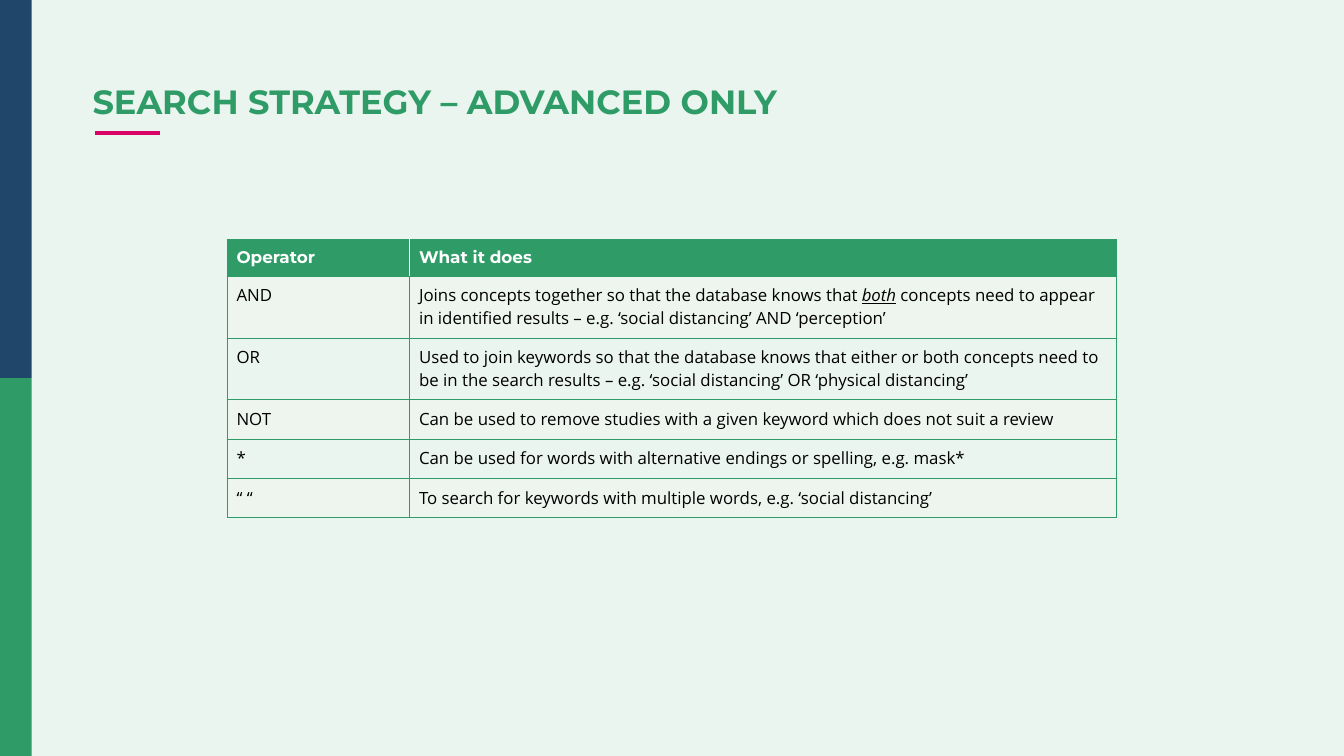
from dataclasses import dataclass

from lxml import etree
from pptx import Presentation
from pptx.dml.color import RGBColor
from pptx.enum import shapes, text
from pptx.oxml import ns
from pptx.util import Cm, Pt


@dataclass(frozen=True)
class Theme:
    green: str = "2F9C67"
    navy: str = "204669"
    pink: str = "D90368"
    pale: str = "EAF5F0"
    band: str = "EEF5EF"
    white: str = "FFFFFF"
    black: str = "000000"
    head: str = "Montserrat"
    body: str = "Open Sans"
    title: float = 18
    cell: float = 9
    rule: float = 2.25
    edge: float = 0.5


@dataclass(frozen=True)
class Bar:
    top: float
    color: str


@dataclass(frozen=True)
class Row:
    name: str
    use: tuple[str, ...]  # every second part is stressed
    high: float
    fill: str | None = None


T = Theme()
WIDE, HIGH = 25.4, 14.29
HALF = HIGH / 2
BARS = (Bar(0, T.navy), Bar(HALF, T.green))
COLS = (3.45, 13.36)
ONE, TWO = 0.74, 1.17  # row heights by number of text lines
ROWS = (
    Row("Operator", ("What it does",), 0.7, T.green),
    Row("AND", ("Joins concepts together so that the database knows that ", "both",
                " concepts need to appear in identified results – e.g. "
                "‘social distancing’ AND ‘perception’"), TWO, T.band),
    Row("OR", ("Used to join keywords so that the database knows that either or "
               "both concepts need to be in the search results – e.g. "
               "‘social distancing’ OR ‘physical distancing’",), TWO),
    Row("NOT", ("Can be used to remove studies with a given keyword which does "
                "not suit a review",), ONE, T.band),
    Row("*", ("Can be used for words with alternative endings or spelling, "
              "e.g. mask*",), ONE),
    Row("“ “", ("To search for keywords with multiple words, "
                "e.g. ‘social distancing’",), ONE, T.band),
)


def rgb(color: str) -> RGBColor:
    return RGBColor.from_string(color)


def write(frame, parts: tuple[str, ...], *, size: float, font: str, color: str,
          bold: bool = False, space: float | None = None) -> None:
    """Fill the first paragraph; every second part is italic and underlined."""
    para = frame.paragraphs[0]
    para.line_spacing = space
    for i, part in enumerate(parts):
        run = para.add_run()
        run.text = part
        face = run.font
        face.size, face.name, face.bold = Pt(size), font, bold
        face.color.rgb = rgb(color)
        face.italic = face.underline = i % 2 == 1


def edge(cell, sides: dict[str, str]) -> None:
    """Draw cell borders; sides maps L, R, T, B, in that order, to colours."""
    props = cell._tc.get_or_add_tcPr()
    for i, (side, color) in enumerate(sides.items()):
        line = etree.Element(ns.qn(f"a:ln{side}"), w=str(Pt(T.edge)))
        fill = etree.SubElement(line, ns.qn("a:solidFill"))
        etree.SubElement(fill, ns.qn("a:srgbClr"), val=color)
        props.insert(i, line)


def draw_bar(slide, bar: Bar) -> None:
    shape = slide.shapes.add_shape(shapes.MSO_SHAPE.RECTANGLE, 0, Cm(bar.top),
                                   Cm(0.6), Cm(HALF))
    shape.shadow.inherit = False
    shape.fill.solid()
    shape.fill.fore_color.rgb = rgb(bar.color)
    shape.line.fill.background()


def draw_title(slide) -> None:
    line = slide.shapes.add_connector(shapes.MSO_CONNECTOR.STRAIGHT,
                                      Cm(1.8), Cm(2.51), Cm(3.03), Cm(2.51))
    line.line.color.rgb = rgb(T.pink)
    line.line.width = Pt(T.rule)
    etree.SubElement(line._element.spPr, ns.qn("a:effectLst"))
    frame = slide.shapes.add_textbox(Cm(1.75), Cm(1.5), Cm(21.9), Cm(0.94)).text_frame
    frame.word_wrap = True
    frame.margin_left = 0
    write(frame, ("SEARCH STRATEGY – ADVANCED ONLY",), size=T.title, font=T.head,
          color=T.green, bold=True, space=0.9)


def draw_cell(cell, parts: tuple[str, ...], fill: str | None, sides: dict[str, str],
              head: bool) -> None:
    cell.margin_left = cell.margin_right = Cm(0.18)
    cell.margin_top = cell.margin_bottom = Cm(0.15)
    if fill:
        cell.fill.solid()
        cell.fill.fore_color.rgb = rgb(fill)
    else:
        cell.fill.background()
    edge(cell, sides)
    write(cell.text_frame, parts, size=T.cell, bold=head,
          font=T.head if head else T.body, color=T.white if head else T.black)


def draw_table(slide, rows: tuple[Row, ...]) -> None:
    grid = slide.shapes.add_table(len(rows), len(COLS), Cm(4.29), Cm(4.52),
                                  Cm(sum(COLS)), Cm(sum(r.high for r in rows))).table
    grid.first_row = grid.horz_banding = False
    for col, wide in zip(grid.columns, COLS):
        col.width = Cm(wide)
    for i, row in enumerate(rows):
        grid.rows[i].height = Cm(row.high)
        head = i == 0
        for j, parts in enumerate(((row.name,), row.use)):
            sides = dict.fromkeys("LRTB", T.green)
            if head:
                sides["L" if j else "R"] = T.white
            draw_cell(grid.cell(i, j), parts, row.fill, sides, head)


def main() -> None:
    deck = Presentation()
    deck.slide_width, deck.slide_height = Cm(WIDE), Cm(HIGH)
    slide = deck.slides.add_slide(deck.slide_layouts[6])
    slide.background.fill.solid()
    slide.background.fill.fore_color.rgb = rgb(T.pale)
    for bar in BARS:
        draw_bar(slide, bar)
    draw_title(slide)
    draw_table(slide, ROWS)
    deck.save("out.pptx")


if __name__ == "__main__":
    main()
